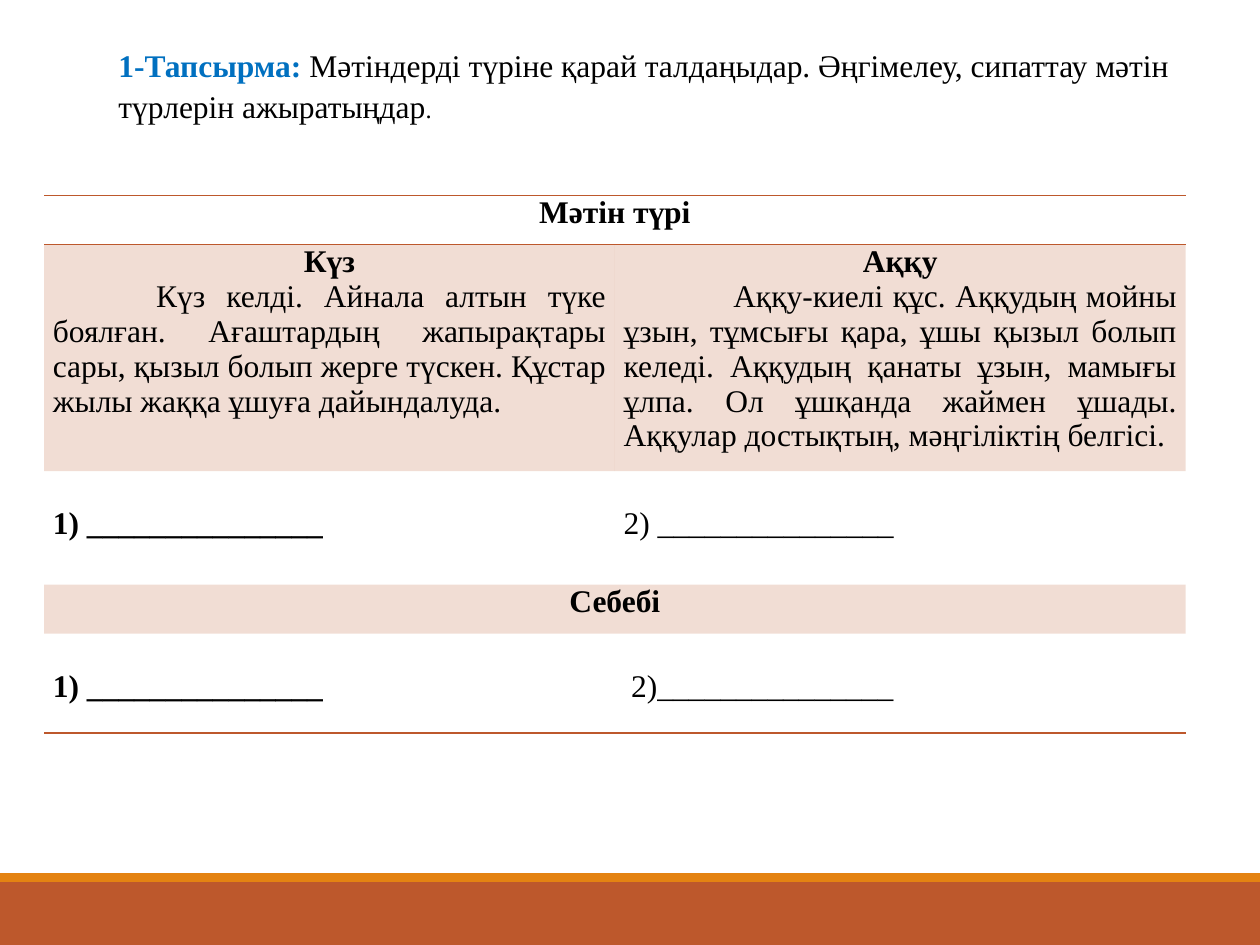
from lxml.etree import SubElement
from pptx import Presentation
from pptx.dml.color import RGBColor
from pptx.enum.shapes import MSO_SHAPE
from pptx.enum.text import MSO_ANCHOR, MSO_AUTO_SIZE, PP_ALIGN
from pptx.oxml.ns import qn
from pptx.util import Inches, Pt

RUST = RGBColor(0xBD, 0x58, 0x2C)
AMBER = RGBColor(0xE4, 0x83, 0x12)
BLUE = RGBColor(0x00, 0x70, 0xC0)
BLACK = RGBColor(0, 0, 0)
PLAIN_GRID = "{2D5ABB26-0587-4C30-8999-92F81FD0307C}"
LEFT, MID, BOTH = PP_ALIGN.LEFT, PP_ALIGN.CENTER, PP_ALIGN.JUSTIFY
LINE = 0.28
BLANK = "_" * 15


class Painter:
    def __init__(self, slide, font="Times New Roman", size=18):
        self.slide, self.font, self.size = slide, font, size

    def bar(self, top, height, color):
        box = self.slide.shapes.add_shape(
            MSO_SHAPE.RECTANGLE, 0, Inches(top), Inches(10), Inches(height))
        box.shadow.inherit = False
        box.fill.solid()
        box.fill.fore_color.rgb = color
        box.line.fill.background()

    def run(self, para, text, bold=False, color=BLACK, size=None):
        run = para.add_run()
        run.text = text
        font = run.font
        font.name, font.size, font.bold = self.font, Pt(size or self.size), bold
        font.color.rgb = color

    def para(self, frame, first, align=LEFT, indent=0):
        """Open a paragraph whose first line is indented."""
        para = frame.paragraphs[0] if first else frame.add_paragraph()
        para.alignment = align
        props = para._p.get_or_add_pPr()
        props.set("marL", "0")
        props.set("indent", str(Inches(indent)))
        return para

    def title(self, lines):
        title = self.slide.shapes.title
        title.left, title.top = Inches(0.35), Inches(0.29)
        title.width, title.height = Inches(9.1), Inches(0.71)
        frame = title.text_frame
        frame.word_wrap = True
        frame.auto_size = MSO_AUTO_SIZE.NONE
        frame.vertical_anchor = MSO_ANCHOR.TOP
        frame.margin_right = 0
        for i, runs in enumerate(lines):
            para = self.para(frame, i == 0, LEFT, 0.49)
            para.line_spacing = 1.08
            for text, style in runs:
                self.run(para, text, **style)

    def table(self, heights):
        table = self.slide.shapes.add_table(
            len(heights), 2, Inches(0.35), Inches(1.55),
            Inches(9.06), Inches(sum(heights))).table
        props = table._tbl.tblPr
        props.find(qn("a:tableStyleId")).text = PLAIN_GRID
        table.first_row = table.horz_banding = False
        for row, height in zip(table.rows, heights):
            row.height = Inches(height)
        return table

    def cell(self, cell, paras, top=0, tint=False, edges=()):
        """Fill a cell; each para is (text, bold, align, indent)."""
        cell.margin_left = cell.margin_right = Inches(0.07)
        cell.margin_top, cell.margin_bottom = Inches(top), 0
        for i, (text, bold, align, indent) in enumerate(paras):
            self.run(self.para(cell.text_frame, i == 0, align, indent), text, bold)
        for edge in edges:
            self.edge(cell, edge)
        if tint:
            cell.fill.solid()
            cell.fill.fore_color.rgb = RUST
            color = cell._tc.tcPr.find(".//" + qn("a:srgbClr"))
            SubElement(color, qn("a:alpha"), val="20000")
        else:
            cell.fill.background()

    def edge(self, cell, name):
        props = cell._tc.get_or_add_tcPr()
        line = SubElement(props, qn("a:" + name), w=str(Pt(1)))
        fill = SubElement(line, qn("a:solidFill"))
        SubElement(fill, qn("a:srgbClr"), val=str(RUST))


def main():
    deck = Presentation()
    deck.slide_width, deck.slide_height = Inches(10), Inches(7.5)
    pen = Painter(deck.slides.add_slide(deck.slide_layouts[5]))
    pen.bar(7, 0.5, RUST)
    pen.bar(6.93, 0.07, AMBER)
    pen.title([
        [("1-Тапсырма: ", {"bold": True, "color": BLUE}),
         ("Мәтіндерді түріне қарай талдаңыдар. Әңгімелеу, сипаттау мәтін", {})],
        [("түрлерін ажыратыңдар", {}), (".", {"size": 14})],
    ])

    table = pen.table([0.39, 1.8, 0.9, 0.39, 0.79])
    heads = [(0, "Мәтін түрі", False, ("lnT", "lnB")), (3, "Себебі", True, ())]
    for row, text, tint, edges in heads:
        table.cell(row, 0).merge(table.cell(row, 1))
        pen.cell(table.cell(row, 0), [(text, True, MID, 0)], tint=tint, edges=edges)
        pen.cell(table.cell(row, 1), [], tint=tint, edges=edges)

    stories = [
        ("Күз", 0.82, "Күз келді. Айнала алтын түке боялған. Ағаштардың "
         "жапырақтары сары, қызыл болып жерге түскен. Құстар жылы жаққа "
         "ұшуға дайындалуда."),
        ("Аққу", 0.87, "Аққу-киелі құс. Аққудың мойны ұзын, тұмсығы қара, "
         "ұшы қызыл болып келеді. Аққудың қанаты ұзын, мамығы ұлпа. Ол "
         "ұшқанда жаймен ұшады. Аққулар достықтың, мәңгіліктің белгісі."),
    ]
    for col, (name, indent, text) in enumerate(stories):
        pen.cell(table.cell(1, col),
                 [(name, True, MID, 0), (text, False, BOTH, indent)], tint=True)

    answers = [(2, "2) ", 0, ()), (4, "2)", 0.06, ("lnB",))]
    for row, mark, indent, edges in answers:
        pen.cell(table.cell(row, 0), [("1) " + BLANK, True, LEFT, 0)],
                 top=LINE, edges=edges)
        pen.cell(table.cell(row, 1), [(mark + BLANK, False, LEFT, indent)],
                 top=LINE, edges=edges)
    deck.save("out.pptx")


if __name__ == "__main__":
    main()
